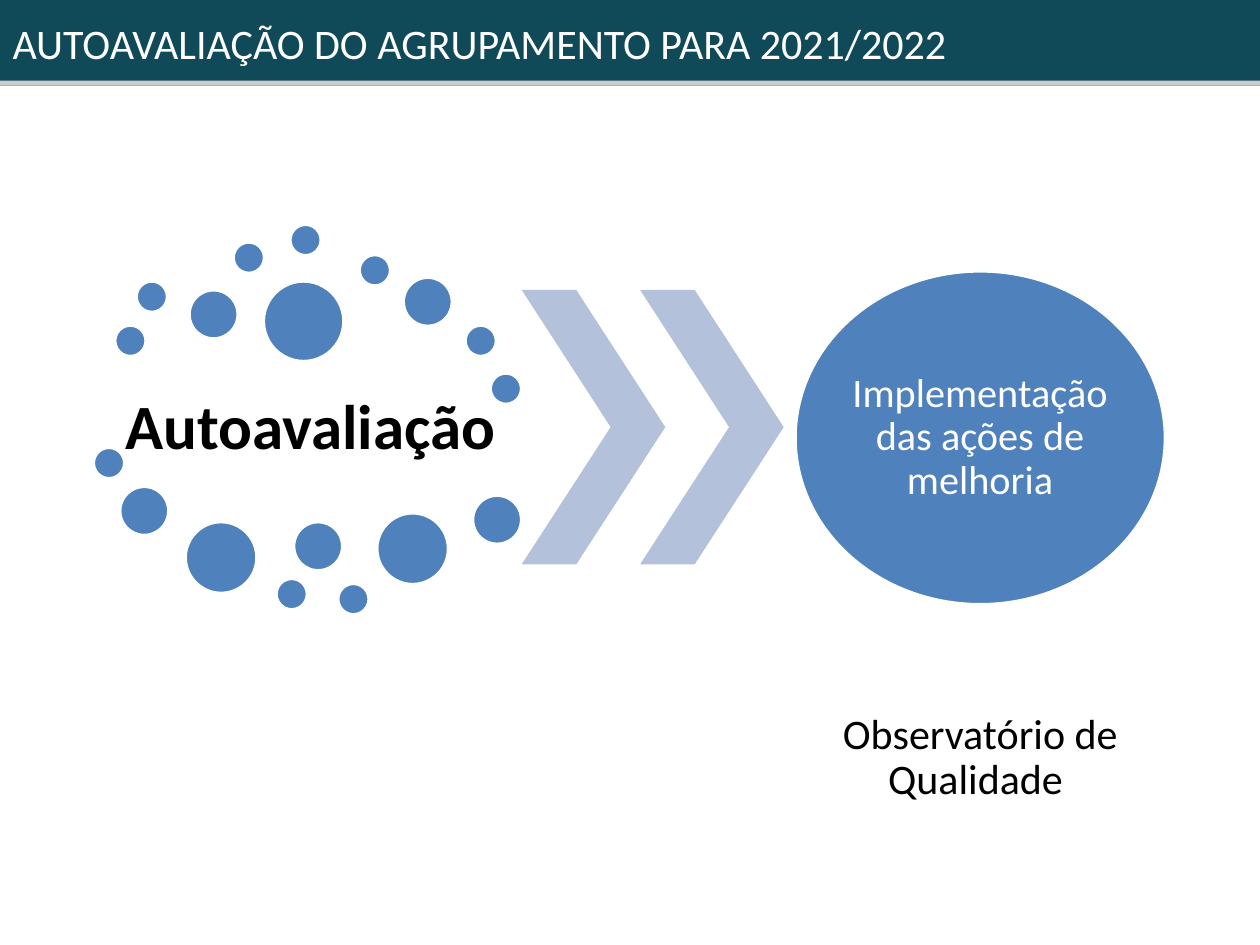
from pptx import Presentation
from pptx.dml.color import RGBColor
from pptx.enum.shapes import MSO_SHAPE
from pptx.enum.text import MSO_ANCHOR, MSO_AUTO_SIZE, PP_ALIGN
from pptx.util import Inches, Pt

# Content
TITLE = "AUTOAVALIAÇÃO DO AGRUPAMENTO PARA 2021/2022"
START = "Autoavaliação"
RESULT = "Implementação das ações de melhoria"
OWNER = "Observatório de Qualidade "

COLORS = {"bar": "104A58", "strip": "CCCCCC", "blue": "4F81BD",
          "chevron": "B3C1DB", "white": "FFFFFF", "black": "000000"}
FONT = "Calibri"

# Dot diameter -> top-left corners of the dots around the first word
DOTS = {
    0.25: [(0.91, 2.58), (1.08, 2.23), (1.85, 1.92), (2.3, 1.78), (2.85, 2.02),
           (3.69, 2.58), (3.89, 2.96), (0.74, 3.55), (2.19, 4.59), (2.68, 4.63)],
    0.39: [(1.5, 2.3), (3.2, 2.2), (0.95, 3.86), (2.33, 4.14), (3.75, 3.93)],
    0.57: [(1.47, 4.14), (2.99, 4.07)],
    0.64: [(2.09, 2.23)],
}
CHEVRON_LEFT, CHEVRON_STEP = 4.14, 0.94

prs = Presentation()
prs.slide_width, prs.slide_height = Inches(10), Inches(7.5)
s = prs.slides.add_slide(prs.slide_layouts[5])


def rgb(name):
    return RGBColor.from_string(COLORS[name])


def add_shape(kind, box, fill, outlined=False):
    sp = s.shapes.add_shape(kind, *map(Inches, box))
    sp.shadow.inherit = False
    sp.fill.solid()
    sp.fill.fore_color.rgb = rgb(fill)
    if outlined:
        sp.line.color.rgb = rgb("white")
        sp.line.width = Pt(2)
    else:
        sp.line.fill.background()
    return sp


def write(sp, text, size, color, inset, align=PP_ALIGN.CENTER, spacing=0.9, bold=False):
    tf = sp.text_frame
    tf.text = text
    tf.word_wrap = True
    tf.auto_size = MSO_AUTO_SIZE.NONE
    tf.vertical_anchor = MSO_ANCHOR.MIDDLE
    tf.margin_left = tf.margin_right = Inches(inset)
    tf.margin_top = tf.margin_bottom = Inches(min(inset, 0.05))
    p = tf.paragraphs[0]
    p.alignment = align
    p.line_spacing = spacing
    font = p.runs[0].font
    font.name, font.size, font.bold = FONT, Pt(size), bold
    font.color.rgb = rgb(color)


def add_label(box, *args, **kwargs):
    write(s.shapes.add_textbox(*map(Inches, box)), *args, **kwargs)


# Title bar with a thin strip along its lower edge
title = s.shapes.title
title.left, title.top, title.width, title.height = map(Inches, (0, 0, 10, 0.68))
title.fill.solid()
title.fill.fore_color.rgb = rgb("bar")
write(title, TITLE, 24, "white", 0.1, align=PP_ALIGN.LEFT, spacing=1.0)
add_shape(MSO_SHAPE.RECTANGLE, (0, 0.64, 10, 0.04), "strip")

# Starting point: a word ringed by dots
add_label((0.91, 2.89, 3.11, 1.03), START, 36, "black", 0.05, bold=True)
for size, corners in DOTS.items():
    for x, y in corners:
        add_shape(MSO_SHAPE.OVAL, (x, y, size, size), "blue", outlined=True)

# Two chevrons leading to the result
for i in range(2):
    left = CHEVRON_LEFT + i * CHEVRON_STEP
    chevron = add_shape(MSO_SHAPE.CHEVRON, (left, 2.3, 1.14, 2.18), "chevron")
    chevron.adjustments[0] = 0.62

# Result and the body in charge of it
result = add_shape(MSO_SHAPE.OVAL, (6.31, 2.15, 2.94, 2.65), "blue", outlined=True)
write(result, RESULT, 23, "white", 0)
add_label((6.22, 5.06, 3.12, 1.92), OWNER, 24, "black", 0.03)

prs.save("out.pptx")
